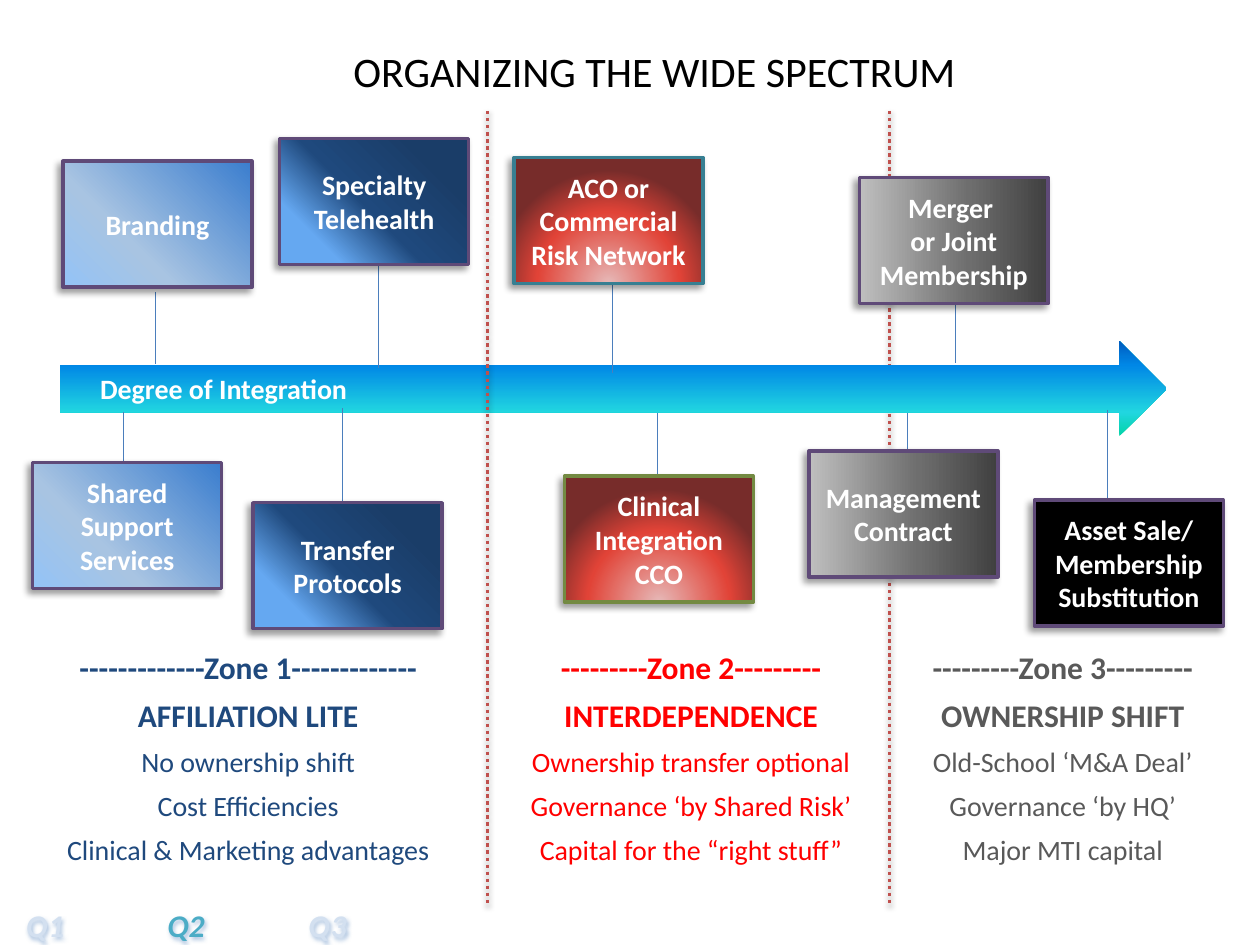
from dataclasses import dataclass
from pptx import Presentation as Deck
from pptx.dml.color import RGBColor as Rgb
from pptx.enum.dml import MSO_LINE as Dash
from pptx.enum.shapes import MSO_CONNECTOR as Link, MSO_SHAPE as Form
from pptx.enum.text import MSO_ANCHOR as Anchor, MSO_AUTO_SIZE as Fit, PP_ALIGN as Align
from pptx.oxml import parse_xml
from pptx.oxml.ns import nsdecls, qn
from pptx.util import Pt

PX = 9144


@dataclass(frozen=True)
class Theme:
    font: str = "Calibri"
    title: int = 24
    head: int = 18
    body: int = 16
    black: str = "000000"
    white: str = "FFFFFF"
    pale: str = "D3E0F0"
    navy: str = "1F497D"
    red: str = "FF0000"
    grey: str = "595959"
    teal: str = "4BACC6"
    blue: str = "4F81BD"
    wire: str = "4B7EBC"
    split: str = "C0504D"
    plum: str = "5F4A78"
    sea: str = "377F92"
    moss: str = "738A42"
    sky_fade: tuple = ((0, "3A7DCE"), (64, "A8C4E2"), (100, "94C3F6"))
    navy_fade: tuple = ((19, "1A3D68"), (54, "1F497D"), (80, "65A8F1"))
    red_fade: tuple = ((0, "E6B9B8"), (63, "E14337"), (100, "772C2A"))
    grey_fade: tuple = ((0, "BFBFBF"), (58, "6E6E6E"), (100, "404040"))
    flow_fade: tuple = ((0, "03D4A8"), (25, "21D6E0"), (75, "0087E6"), (100, "005CBF"))
    box_shade: tuple = ("000000", 40, 4, 3, 135)
    line_shade: tuple = ("000000", 38, 3.1, 1.6, 90)
    text_shade: tuple = ("4F81BD", 50, 1, 1, 45)


T = Theme()


def emu(*nums):
    return [n * PX for n in nums]


def effect(shade=None):
    inner = ""
    if shade:
        hue, alpha, blur, dist, turn = shade
        inner = (f'<a:outerShdw blurRad="{Pt(blur)}" dist="{Pt(dist)}" dir="{turn * 60000}" '
                 f'algn="tl" rotWithShape="0"><a:srgbClr val="{hue}">'
                 f'<a:alpha val="{alpha * 1000}"/></a:srgbClr></a:outerShdw>')
    return parse_xml(f'<a:effectLst {nsdecls("a")}>{inner}</a:effectLst>')


def fade(stops, turn):
    marks = "".join(f'<a:gs pos="{at * 1000}"><a:srgbClr val="{hue}"/></a:gs>' for at, hue in stops)
    if turn is None:
        way = ('<a:path path="circle"><a:fillToRect l="50000" t="130000" '
               'r="50000" b="-30000"/></a:path>')
    else:
        way = f'<a:lin ang="{turn * 60000}" scaled="0"/>'
    return parse_xml(f'<a:gradFill {nsdecls("a")} rotWithShape="1">'
                     f'<a:gsLst>{marks}</a:gsLst>{way}</a:gradFill>')


class Page:
    def __init__(self, deck):
        self.slide = deck.slides.add_slide(deck.slide_layouts[5])
        self.items = self.slide.shapes

    def run(self, para, words, size, hue, bold=False):
        run = para.add_run()
        run.text = words
        font = run.font
        font.name, font.size, font.bold = T.font, Pt(size), bold
        font.color.rgb = Rgb.from_string(hue)
        return run

    def fill(self, frame, lines, size, hue, bold=False, heads=0, gap=0):
        frame.word_wrap = True
        for i, words in enumerate(lines):
            para = frame.add_paragraph() if i else frame.paragraphs[0]
            para.alignment = Align.CENTER
            para.space_before = Pt(gap)
            top = i < heads
            self.run(para, words, T.head if top else size, hue, bold or top)

    def title(self, words, x, y, w, h):
        item = self.items.title
        item.left, item.top, item.width, item.height = emu(x, y, w, h)
        frame = item.text_frame
        frame.auto_size = Fit.NONE
        frame.vertical_anchor = Anchor.MIDDLE
        self.fill(frame, [words], T.title, T.black)

    def text(self, lines, x, y, w, h, hue, **style):
        frame = self.items.add_textbox(*emu(x, y, w, h)).text_frame
        self.fill(frame, lines, T.body, hue, **style)

    def shape(self, form, x, y, w, h, stops, turn):
        item = self.items.add_shape(form, *emu(x, y, w, h))
        item.shadow.inherit = False
        if isinstance(stops, str):
            item.fill.solid()
            item.fill.fore_color.rgb = Rgb.from_string(stops)
        else:
            item.fill.gradient()
            props = item._element.spPr
            props.replace(props.find(qn("a:gradFill")), fade(stops, turn))
        return item

    def arrow(self, x, y, w, h):
        self.shape(Form.RIGHT_ARROW, x, y, w, h, T.flow_fade, 270).line.fill.background()

    def box(self, lines, x, y, stops, turn=0, edge=T.plum):
        item = self.shape(Form.RECTANGLE, x, y, 150, 100, stops, turn)
        item.line.color.rgb = Rgb.from_string(edge)
        item.line.width = Pt(2)
        props = item._element.spPr
        props.replace(props.find(qn("a:effectLst")), effect(T.box_shade))
        item.text_frame.vertical_anchor = Anchor.MIDDLE
        self.fill(item.text_frame, lines, T.body, T.white, bold=True)

    def line(self, x, top, end, hue=T.wire, width=0.5, dash=None, shade=None):
        item = self.items.add_connector(Link.STRAIGHT, *emu(x, top, x, end))
        item.line.color.rgb = Rgb.from_string(hue)
        item.line.width = Pt(width)
        if dash:
            item.line.dash_style = dash
        item._element.spPr.append(effect(shade))

    def split(self, x):
        self.line(x, 88, 718, T.split, 2, Dash.ROUND_DOT, T.line_shade)

    def terms(self, parts, x, y, w, h, step):
        item = self.items.add_textbox(*emu(x, y, w, h))
        item._element.spPr.append(effect(T.text_shade))
        para = item.text_frame.paragraphs[0]
        stops = "".join(f'<a:tab pos="{i * step * PX}" algn="l"/>' for i in range(1, 5))
        para._p.get_or_add_pPr().append(parse_xml(f'<a:tabLst {nsdecls("a")}>{stops}</a:tabLst>'))
        for words, hue, edge, space in parts:
            run = self.run(para, words, T.head, hue, True)
            run.font.italic = True
            props = run._r.get_or_add_rPr()
            props.set("spc", str(space))
            props.insert(0, parse_xml(
                f'<a:ln {nsdecls("a")} w="{Pt(0.75)}"><a:solidFill>'
                f'<a:srgbClr val="{edge}"/></a:solidFill></a:ln>'))


def main():
    deck = Deck()
    deck.slide_width, deck.slide_height = emu(1000, 750)
    page = Page(deck)
    page.title("ORGANIZING THE WIDE SPECTRUM", 60, 31, 919, 50)
    page.split(706)

    zones = [
        (0, 394, T.navy, "-------------Zone 1-------------", "AFFILIATION LITE",
         "No ownership shift", "Cost Efficiencies", "Clinical & Marketing advantages"),
        (407, 283, T.red, "---------Zone 2---------", "INTERDEPENDENCE",
         "Ownership transfer optional", "Governance ‘by Shared Risk’",
         "Capital for the “right stuff”"),
        (690, 307, T.grey, "---------Zone 3---------", "OWNERSHIP SHIFT",
         "Old-School ‘M&A Deal’", "Governance ‘by HQ’", "Major MTI capital"),
    ]
    for x, w, hue, *lines in zones:
        page.text(lines, x, 509, w, 185, hue, heads=2, gap=6)

    for x, top, end in [(720, 293, 375), (522, 324, 424)]:
        page.line(x, top, end)
    page.arrow(48, 271, 878, 75)
    for x, top, end in [(879, 325, 409), (272, 324, 434), (98, 327, 395), (123, 232, 289),
                        (486, 150, 296), (758, 206, 288), (300, 202, 292)]:
        page.line(x, top, end)

    sky, navy = (T.sky_fade, 135), (T.navy_fade, 135)
    page.box(["Merger ", "or Joint Membership"], 682, 141, T.grey_fade)
    page.box(["Asset Sale/", "Membership Substitution"], 821, 397, T.black)
    page.box(["Branding"], 50, 128, *sky)
    page.box(["ACO or Commercial Risk Network"], 408, 125, T.red_fade, None, T.sea)
    page.box(["Shared Support", "Services"], 26, 367, *sky)
    page.box(["Clinical Integration CCO"], 448, 378, T.red_fade, None, T.moss)
    page.box(["Specialty Telehealth"], 222, 110, *navy)
    page.box(["Transfer Protocols"], 201, 399, *navy)
    page.box(["Management Contract"], 642, 358, T.grey_fade)
    page.text(["Degree of Integration"], 50, 290, 255, 37, T.white, bold=True)
    page.split(387)

    page.terms([("Q1\t\t", T.pale, T.blue, 50), ("Q2", T.teal, T.white, 0),
                ("\t\tQ3", T.pale, T.blue, 50)], 11, 714, 646, 36, 56)
    deck.save("out.pptx")


if __name__ == "__main__":
    main()
